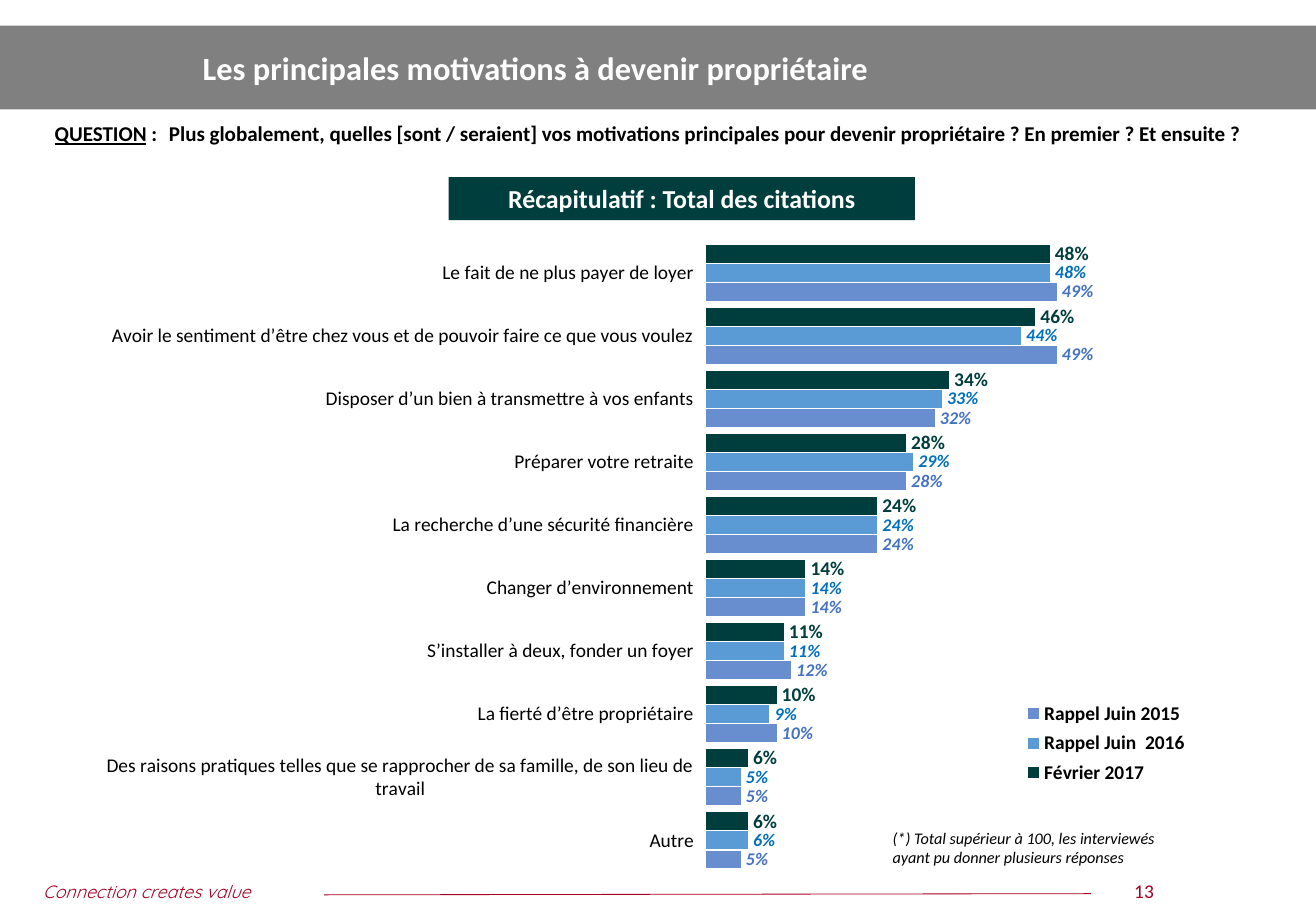
from lxml import etree
from pptx import Presentation
from pptx.chart.data import CategoryChartData
from pptx.dml.color import RGBColor
from pptx.enum.chart import XL_CHART_TYPE, XL_LABEL_POSITION, XL_LEGEND_POSITION, XL_TICK_MARK
from pptx.enum.shapes import MSO_CONNECTOR, MSO_SHAPE
from pptx.enum.text import MSO_ANCHOR, PP_ALIGN
from pptx.oxml.ns import qn
from pptx.util import Inches, Pt

WHITE = RGBColor(0xFF, 0xFF, 0xFF)
BLACK = RGBColor(0, 0, 0)
GREY = RGBColor(0x80, 0x80, 0x80)
CRIMSON = RGBColor(0xA5, 0x00, 0x21)
DARK_GREEN = RGBColor(0x00, 0x3E, 0x3E)
LIGHT_BLUE = RGBColor(0x5B, 0x9B, 0xD5)
LABEL_BLUE = RGBColor(0x00, 0x70, 0xC0)
INDIGO = RGBColor(0x44, 0x72, 0xC4)
FONT = "Calibri"

# Reason, then shares in February 2017, June 2016 and June 2015
MOTIVATIONS = [
    ("Le fait de ne plus payer de loyer", 0.48, 0.48, 0.49),
    ("Avoir le sentiment d’être chez vous et de pouvoir faire ce que vous voulez", 0.46, 0.44, 0.49),
    ("Disposer d’un bien à transmettre à vos enfants", 0.34, 0.33, 0.32),
    ("Préparer votre retraite", 0.28, 0.29, 0.28),
    ("La recherche d’une sécurité financière", 0.24, 0.24, 0.24),
    ("Changer d’environnement", 0.14, 0.14, 0.14),
    ("S’installer à deux, fonder un foyer", 0.11, 0.11, 0.12),
    ("La fierté d’être propriétaire", 0.10, 0.09, 0.10),
    ("Des raisons pratiques telles que se rapprocher de sa famille, de son lieu de travail", 0.06, 0.05, 0.05),
    ("Autre", 0.06, 0.06, 0.05),
]

# Name, bar colour, opacity in %, label colour, label size, label italic
WAVES = [
    ("Février 2017", DARK_GREEN, 100, DARK_GREEN, 12, False),
    ("Rappel Juin  2016", LIGHT_BLUE, 100, LABEL_BLUE, 11, True),
    ("Rappel Juin 2015", INDIGO, 80, INDIGO, 11, True),
]


def format_font(font, size, color=BLACK, bold=False, italic=False, name=FONT):
    font.name = name
    font.size = Pt(size)
    font.bold = bold
    font.italic = italic
    font.color.rgb = color


def write(tf, text, align=PP_ALIGN.LEFT, anchor=MSO_ANCHOR.TOP, **style):
    """Fill a text frame with one formatted paragraph and return it."""
    tf.word_wrap = True
    tf.vertical_anchor = anchor
    p = tf.paragraphs[0]
    p.alignment = align
    r = p.add_run()
    r.text = text
    format_font(r.font, **style)
    return p


def add_text(slide, box, text, **style):
    tb = slide.shapes.add_textbox(*map(Inches, box))
    return tb.text_frame, write(tb.text_frame, text, **style)


def add_block(slide, box, color):
    sp = slide.shapes.add_shape(MSO_SHAPE.RECTANGLE, *map(Inches, box))
    sp.shadow.inherit = False
    sp.fill.solid()
    sp.fill.fore_color.rgb = color
    sp.line.fill.background()
    return sp


def add_rule(slide, start, end, color, width):
    cx = slide.shapes.add_connector(MSO_CONNECTOR.STRAIGHT, *map(Inches, start + end))
    cx.line.color.rgb = color
    cx.line.width = Pt(width)
    etree.SubElement(cx._element.spPr, qn("a:effectLst"))


def add_question(slide):
    style = dict(size=13, bold=True)
    tf, p = add_text(slide, (0.38, 0.96, 10.67, 0.58), "QUESTION", align=PP_ALIGN.JUSTIFY, **style)
    tf.margin_left, tf.margin_top = Inches(0.09), Inches(0.11)
    tf.margin_right, tf.margin_bottom = Inches(0.36), Inches(0.18)
    p.runs[0].font.underline = True
    p._p.get_or_add_pPr().set("marL", str(Inches(0.98)))
    p._p.get_or_add_pPr().set("indent", str(-Inches(0.98)))
    r = p.add_run()
    r.text = (" :\tPlus globalement, quelles [sont / seraient] vos motivations principales "
              "pour devenir propriétaire ? En premier ? Et ensuite ?")
    format_font(r.font, **style)


def make_layout(x, y, w, h, inner=False):
    layout = etree.Element(qn("c:layout"))
    manual = etree.SubElement(layout, qn("c:manualLayout"))
    settings = [("layoutTarget", "inner")] if inner else []
    settings += [("xMode", "edge"), ("yMode", "edge"), ("x", x), ("y", y), ("w", w), ("h", h)]
    for tag, value in settings:
        etree.SubElement(manual, qn(f"c:{tag}")).set("val", str(value))
    return layout


def place_chart_parts(chart):
    """Fix the position of the plot and of the legend inside the chart."""
    plot_area = chart.element.find(".//" + qn("c:plotArea"))
    legend = chart.element.find(".//" + qn("c:legend"))
    for part in (plot_area, legend):
        for old in part.findall(qn("c:layout")):
            part.remove(old)
    plot_area.insert(0, make_layout(0.519, 0, 0.356, 0.999, inner=True))
    legend.find(qn("c:legendPos")).addnext(make_layout(0.76, 0.72, 0.18, 0.15))


def format_series(series, color, opacity, label_color, label_size, italic):
    fill = series.format.fill
    fill.solid()
    fill.fore_color.rgb = color
    if opacity < 100:
        clr = series._element.find(f"{qn('c:spPr')}/{qn('a:solidFill')}/{qn('a:srgbClr')}")
        etree.SubElement(clr, qn("a:alpha")).set("val", str(opacity * 1000))
    series.format.line.color.rgb = WHITE
    series.format.line.width = Pt(0.75)
    labels = series.data_labels
    labels.show_value = True
    labels.number_format = "0%"
    labels.number_format_is_linked = False
    labels.position = XL_LABEL_POSITION.OUTSIDE_END
    format_font(labels.font, label_size, label_color, bold=True, italic=italic)


def add_bar_chart(slide, box):
    names, *shares = zip(*MOTIVATIONS)
    data = CategoryChartData(number_format="0%")
    data.categories = names
    for wave, values in zip(WAVES, shares):
        data.add_series(wave[0], values)
    chart = slide.shapes.add_chart(XL_CHART_TYPE.BAR_CLUSTERED, *map(Inches, box), data).chart
    chart.has_title = False
    format_font(chart.font, 18)

    plot = chart.plots[0]
    plot.gap_width = 30
    plot.overlap = 0
    plot.vary_by_categories = False
    for series, wave in zip(plot.series, WAVES):
        format_series(series, *wave[1:])

    reasons = chart.category_axis
    reasons.reverse_order = True
    reasons.major_tick_mark = XL_TICK_MARK.OUTSIDE
    reasons.format.line.fill.background()
    format_font(reasons.tick_labels.font, 12)
    share_axis = chart.value_axis
    share_axis.minimum_scale = 0
    share_axis.maximum_scale = 0.6
    share_axis.has_major_gridlines = False
    share_axis.visible = False

    chart.has_legend = True
    chart.legend.position = XL_LEGEND_POSITION.RIGHT
    chart.legend.include_in_layout = False
    format_font(chart.legend.font, 12, bold=True)
    place_chart_parts(chart)


def main():
    prs = Presentation()
    prs.slide_width, prs.slide_height = Inches(11.29), Inches(7.87)
    slide = prs.slides.add_slide(prs.slide_layouts[6])

    # Header band and footer
    add_block(slide, (0, 0.22, 11.29, 0.72), GREY)
    add_text(slide, (0.27, 7.51, 2.98, 0.29), "Connection creates value",
             size=11, color=CRIMSON, italic=True, name="Quicksand")
    add_rule(slide, (2.78, 7.68), (9.36, 7.67), CRIMSON, 0.5)
    add_text(slide, (9.52, 7.5, 0.59, 0.3), "13", align=PP_ALIGN.CENTER, size=12, color=CRIMSON)

    # Chart
    add_bar_chart(slide, (0.66, 2.07, 10.39, 5.42))

    # Title, question and chart heading
    add_text(slide, (1.64, 0.22, 9.48, 0.72), "Les principales motivations à devenir propriétaire",
             align=PP_ALIGN.JUSTIFY, anchor=MSO_ANCHOR.MIDDLE, size=20, color=WHITE, bold=True)
    add_question(slide)
    heading = add_block(slide, (3.85, 1.52, 4, 0.37), DARK_GREEN)
    write(heading.text_frame, "Récapitulatif : Total des citations", align=PP_ALIGN.CENTER,
          anchor=MSO_ANCHOR.MIDDLE, size=16, color=WHITE, bold=True)

    # Note
    add_text(slide, (7.56, 7.06, 2.6, 0.44),
             "(*) Total supérieur à 100, les interviewés ayant pu donner plusieurs réponses",
             size=10, italic=True)
    prs.save("out.pptx")


if __name__ == "__main__":
    main()
